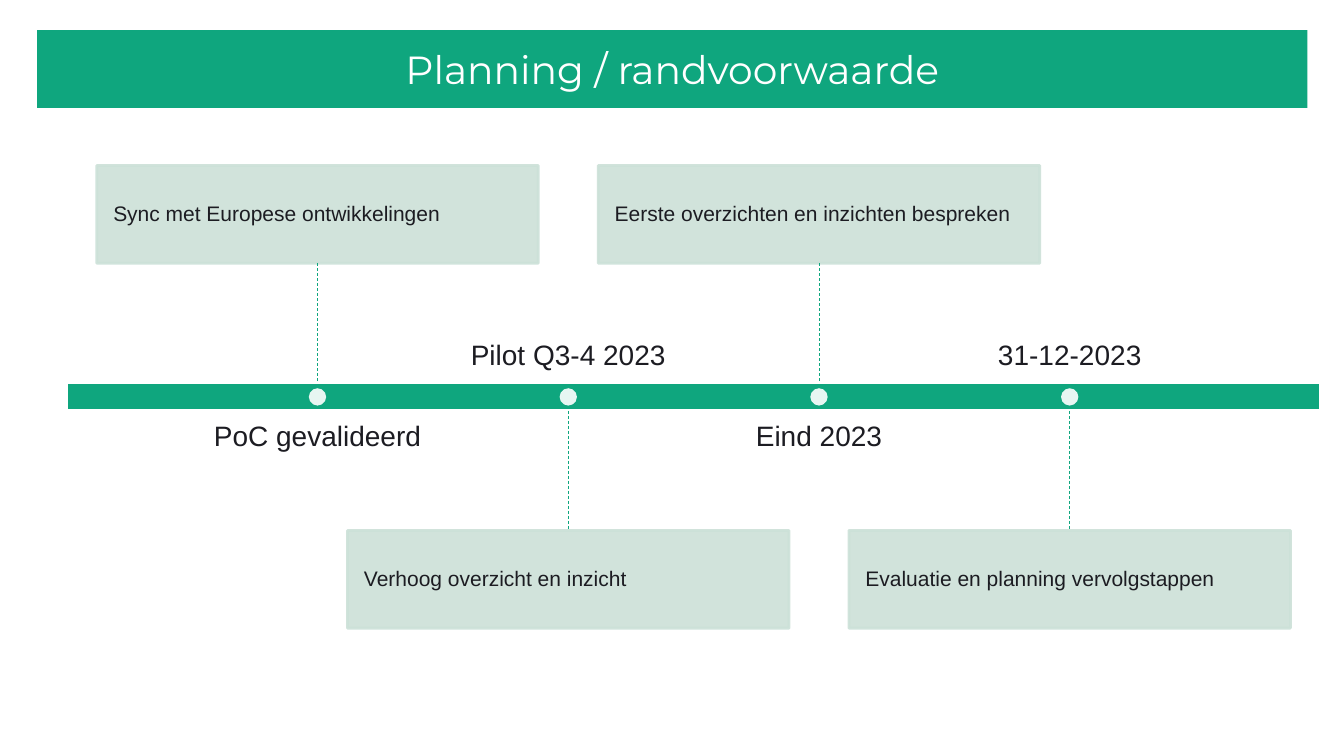
from pptx import Presentation
from pptx import util as u
from pptx.dml.color import RGBColor
from pptx.enum import dml, shapes, text
from pptx.oxml.ns import qn
from lxml import etree

COLORS = {"green": "0FA67E", "mint": "CCE1D8", "white": "FFFFFF", "ink": "1C1C22"}


class TimelineSlide:
    """Style and drawing methods for one slide; all lengths in points."""

    def __init__(self, slide):
        self.slide = slide

    def color(self, name):
        return RGBColor.from_string(COLORS[name])

    def set_words(self, shape, words, size, color="ink", font="Arial", align="LEFT",
                  anchor="MIDDLE", inset=0.0, spacing=0.9):
        frame = shape.text_frame
        frame.word_wrap = True
        frame.auto_size = text.MSO_AUTO_SIZE.NONE
        frame.vertical_anchor = text.MSO_ANCHOR[anchor]
        frame.margin_left = frame.margin_right = u.Pt(inset)
        frame.margin_top = frame.margin_bottom = u.Pt(inset)
        frame.text = words
        paragraph = frame.paragraphs[0]
        paragraph.alignment = text.PP_ALIGN[align]
        paragraph.line_spacing = spacing
        paragraph.space_before = u.Pt(0)
        paragraph.font.size = u.Pt(size)
        paragraph.font.name = font
        paragraph.font.color.rgb = self.color(color)

    def title(self, words, left, top, width, height):
        heading = self.slide.shapes.title
        heading.left, heading.top = u.Pt(left), u.Pt(top)
        heading.width, heading.height = u.Pt(width), u.Pt(height)
        heading.fill.solid()
        heading.fill.fore_color.rgb = self.color("green")
        self.set_words(heading, words, 28, "white", "Montserrat", "CENTER",
                       inset=7.2, spacing=1.0)

    def block(self, kind, left, top, width, height, fill, line=None, opacity=100):
        block = self.slide.shapes.add_shape(
            shapes.MSO_SHAPE[kind], u.Pt(left), u.Pt(top), u.Pt(width), u.Pt(height))
        block.shadow.inherit = False
        block.fill.solid()
        block.fill.fore_color.rgb = self.color(fill)
        if line:
            block.line.color.rgb = self.color(line)
            block.line.width = u.Pt(2)
        else:
            block.line.fill.background()
        if opacity < 100:
            for tint in block.element.spPr.iter(qn("a:srgbClr")):
                etree.SubElement(tint, qn("a:alpha")).set("val", str(opacity * 1000))
        return block

    def label(self, words, left, top, width, height, anchor):
        label = self.slide.shapes.add_textbox(u.Pt(left), u.Pt(top), u.Pt(width), u.Pt(height))
        self.set_words(label, words, 20, align="CENTER", anchor=anchor)

    def stem(self, x, top, bottom):
        stem = self.slide.shapes.add_connector(
            shapes.MSO_CONNECTOR.STRAIGHT, u.Pt(x), u.Pt(top), u.Pt(x), u.Pt(bottom))
        stem.line.color.rgb = self.color("green")
        stem.line.width = u.Pt(0.5)
        stem.line.dash_style = dml.MSO_LINE.DASH
        etree.SubElement(stem.element.spPr, qn("a:effectLst"))


MILESTONES = [
    ("PoC gevalideerd", "Sync met Europese ontwikkelingen"),
    ("Pilot Q3-4 2023", "Verhoog overzicht en inzicht"),
    ("Eind 2023", "Eerste overzichten en inzichten bespreken"),
    ("31-12-2023", "Evaluatie en planning vervolgstappen"),
]
FIRST_X, STEP = 226.8, 179.1
BAR_TOP, BAR_HEIGHT = 273.5, 20
BAR_BOTTOM = BAR_TOP + BAR_HEIGHT
BAR_MIDDLE = BAR_TOP + BAR_HEIGHT / 2
BOX_WIDTH, BOX_HEIGHT, STEM = 315.4, 69.8, 85.4
LABEL_WIDTH, LABEL_HEIGHT, LABEL_GAP = 286.6, 56.9, 8.3
DOT = 12.4


def main():
    deck = Presentation()
    deck.slide_width, deck.slide_height = u.Pt(960), u.Pt(540)
    planning = TimelineSlide(deck.slides.add_slide(deck.slide_layouts[5]))

    # Title banner and time bar
    planning.title("Planning / randvoorwaarde", 26.6, 21.6, 907.2, 55.5)
    planning.block("RECTANGLE", 47.6, BAR_TOP, 895.5, BAR_HEIGHT, "green", "white")

    # Milestones, with boxes alternating above and below the bar
    for index, (moment, goal) in enumerate(MILESTONES):
        x = FIRST_X + index * STEP
        if index % 2 == 0:
            box_top = BAR_TOP - STEM - BOX_HEIGHT
            stem_top, label_top, anchor = BAR_TOP - STEM, BAR_BOTTOM + LABEL_GAP, "TOP"
        else:
            box_top = BAR_BOTTOM + STEM
            stem_top, label_top, anchor = BAR_BOTTOM, BAR_TOP - LABEL_GAP - LABEL_HEIGHT, "BOTTOM"
        planning.label(moment, x - LABEL_WIDTH / 2, label_top, LABEL_WIDTH, LABEL_HEIGHT, anchor)
        box = planning.block("RECTANGLE", x - BOX_WIDTH / 2, box_top, BOX_WIDTH, BOX_HEIGHT,
                             "mint", "mint", opacity=90)
        planning.set_words(box, goal, 15, inset=11.8)
        planning.stem(x, stem_top, stem_top + STEM)
        planning.block("OVAL", x - DOT / 2, BAR_MIDDLE - DOT / 2, DOT, DOT, "white", opacity=90)

    deck.save("out.pptx")


if __name__ == "__main__":
    main()
